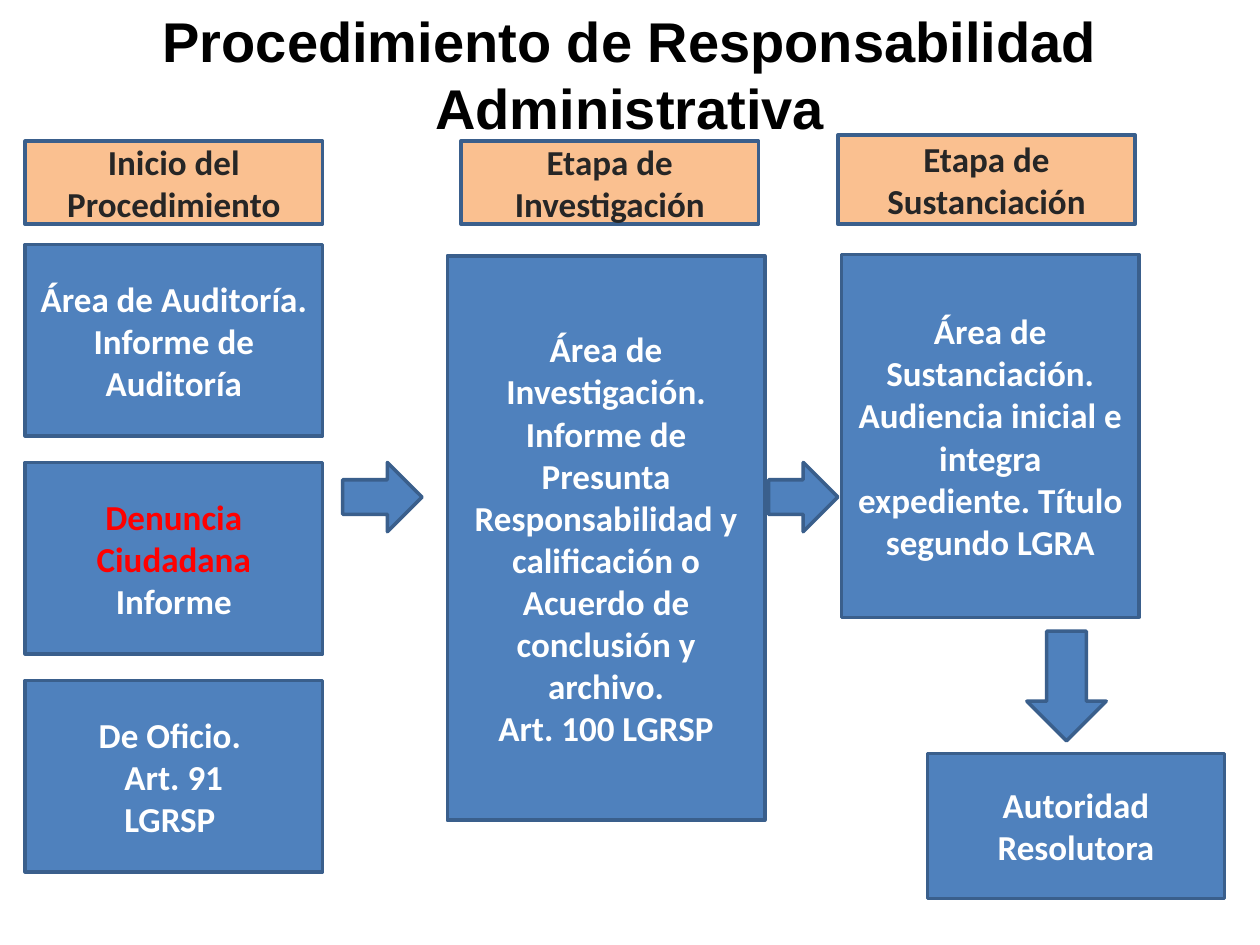
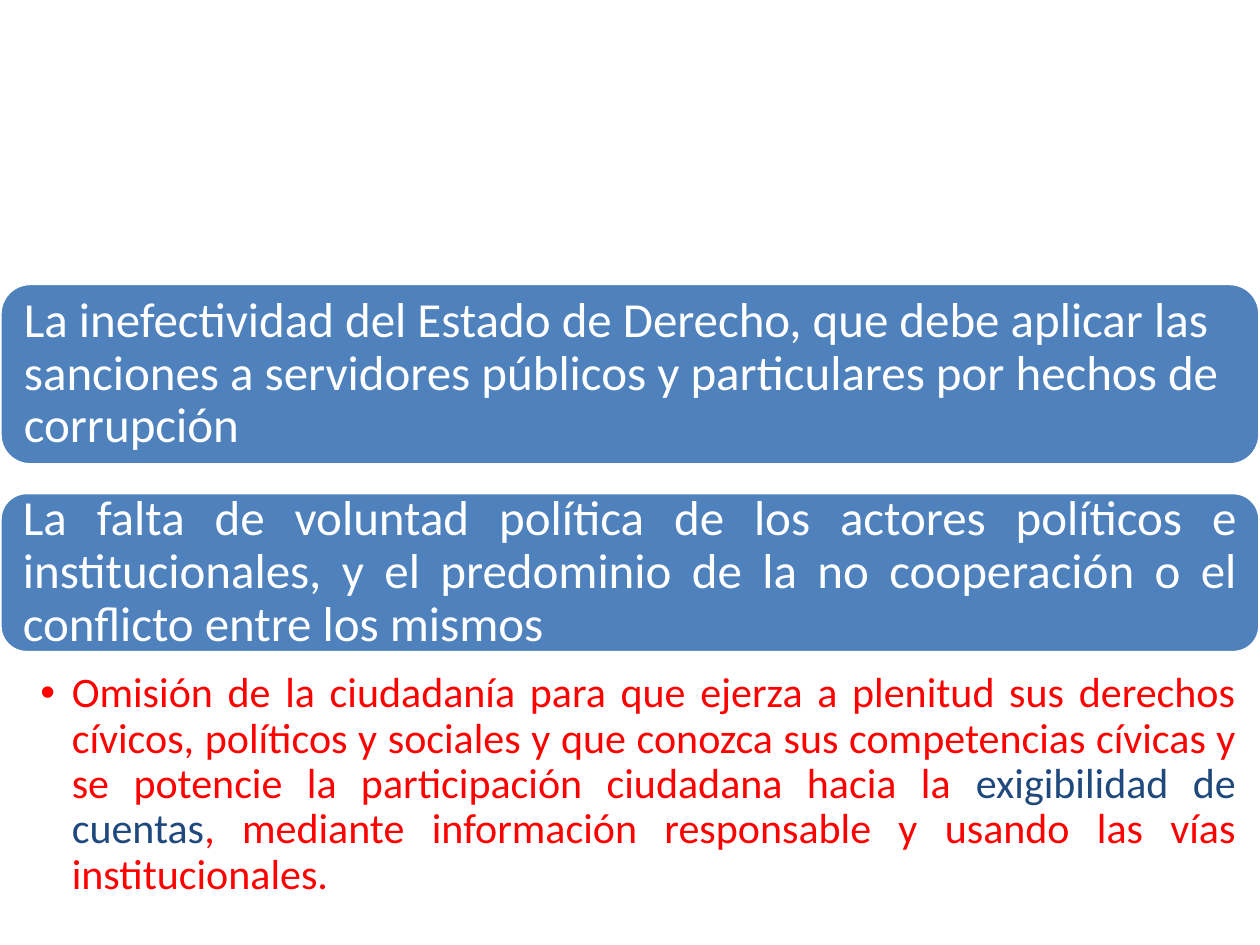
import dataclasses

import pptx
import pptx.dml.color
import pptx.enum.shapes
import pptx.enum.text
import pptx.util
from lxml import etree

EMU_PER_PX = 9144
BLUE, BORDER, PEACH = "4F81BD", "3A5F8C", "FAC090"
WHITE, BLACK, CHARCOAL, RED, NAVY = "FFFFFF", "000000", "262626", "FF0000", "1F497D"
Shape = pptx.enum.shapes.MSO_SHAPE
Align = pptx.enum.text.PP_ALIGN
Anchor = pptx.enum.text.MSO_ANCHOR


@dataclasses.dataclass(frozen=True)
class TextStyle:
    size: int
    bold: bool = False
    font: str = "Calibri"
    align: Align = Align.CENTER
    spacing: float = 1.0
    anchor: Anchor = Anchor.MIDDLE
    insets: tuple[int, int, int, int] = (10, 5, 10, 5)
    bullet_indent: int = 0


@dataclasses.dataclass(frozen=True)
class Block:
    left: int
    top: int
    width: int
    height: int
    paragraphs: tuple[tuple[tuple[str, str], ...], ...] = ()
    kind: Shape = Shape.RECTANGLE
    fill: str = BLUE
    line: str = BORDER


TITLE = TextStyle(32, bold=True, font="Arial", anchor=Anchor.TOP)
LABEL = TextStyle(20, bold=True)
BAND = TextStyle(28, align=Align.LEFT, spacing=0.9, insets=(12, 12, 12, 12))
BAND_JUSTIFIED = dataclasses.replace(BAND, align=Align.JUSTIFY)
BULLET = TextStyle(24, align=Align.JUSTIFY, spacing=0.9, anchor=Anchor.TOP,
                   insets=(32, 3, 19, 3), bullet_indent=25)

BOX_WIDTH, START_LEFT, START_TOP, START_HEIGHT, START_STEP = 236, 20, 194, 152, 173


def px(length: int) -> int:
    return pptx.util.Emu(length * EMU_PER_PX)


def color(code: str) -> pptx.dml.color.RGBColor:
    return pptx.dml.color.RGBColor.from_string(code)


def lines(*texts: str, ink: str = WHITE) -> tuple:
    return tuple(((text, ink),) for text in texts)


def add_bullet(paragraph, indent: int) -> None:
    properties = paragraph._p.get_or_add_pPr()
    properties.set("marL", str(px(indent)))
    properties.set("indent", str(-px(indent)))
    namespace = etree.QName(properties).namespace
    font = etree.SubElement(properties, f"{{{namespace}}}buFont")
    font.set("typeface", "Arial")
    etree.SubElement(properties, f"{{{namespace}}}buChar").set("char", "•")


def write(box, paragraphs: tuple, style: TextStyle) -> None:
    frame = box.text_frame
    frame.word_wrap = True
    frame.vertical_anchor = style.anchor
    (frame.margin_left, frame.margin_top,
     frame.margin_right, frame.margin_bottom) = map(px, style.insets)
    for index, spans in enumerate(paragraphs):
        paragraph = frame.add_paragraph() if index else frame.paragraphs[0]
        if style.bullet_indent:
            add_bullet(paragraph, style.bullet_indent)
        paragraph.alignment = style.align
        paragraph.line_spacing = style.spacing
        for text, ink in spans:
            span = paragraph.add_run()
            span.text = text
            span.font.name = style.font
            span.font.size = pptx.util.Pt(style.size)
            span.font.bold = style.bold
            span.font.color.rgb = color(ink)


def draw_block(page, block: Block, style: TextStyle) -> None:
    shape = page.shapes.add_shape(
        block.kind, *map(px, (block.left, block.top, block.width, block.height)))
    shape.shadow.inherit = False
    shape.fill.solid()
    shape.fill.fore_color.rgb = color(block.fill)
    shape.line.color.rgb = color(block.line)
    shape.line.width = pptx.util.Pt(2)
    write(shape, block.paragraphs, style)


def draw_text(page, block: Block, style: TextStyle) -> None:
    box = page.shapes.add_textbox(
        *map(px, (block.left, block.top, block.width, block.height)))
    write(box, block.paragraphs, style)


def header(left: int, top: int, height: int, text: str) -> Block:
    return Block(left, top, BOX_WIDTH, height, lines(text, ink=CHARCOAL), fill=PEACH)


def band(top: int, height: int, text: str) -> Block:
    return Block(0, top, 1000, height, lines(text), Shape.ROUNDED_RECTANGLE, line=WHITE)


def build_procedure(page) -> None:
    title = lines("Procedimiento de Responsabilidad Administrativa", ink=BLACK)
    draw_text(page, Block(0, 0, 1000, 77, title), TITLE)
    starts = (
        lines("Área de Auditoría. Informe de Auditoría"),
        ((("Denuncia Ciudadana ", RED), ("Informe", WHITE)),),
        lines("De Oficio. ", "Art. 91", "LGRSP "),
    )
    blocks = [Block(START_LEFT, START_TOP + row * START_STEP, BOX_WIDTH, START_HEIGHT, text)
              for row, text in enumerate(starts)]
    blocks += [
        Block(355, 203, 252, 448, lines(
            "Área de Investigación. Informe de Presunta Responsabilidad y calificación "
            "o Acuerdo de conclusión y archivo.", "Art. 100 LGRSP")),
        Block(736, 598, BOX_WIDTH, 115, lines("Autoridad Resolutora")),
        Block(668, 202, BOX_WIDTH, 288, lines(
            "Área de Sustanciación. Audiencia inicial e integra expediente. "
            "Título segundo LGRA")),
        header(START_LEFT, 112, 66, "Inicio del Procedimiento"),
        header(366, 112, 66, "Etapa de Investigación"),
        header(665, 107, 71, "Etapa de Sustanciación"),
        Block(272, 367, 63, 55, kind=Shape.RIGHT_ARROW),
        Block(610, 367, 55, 55, kind=Shape.RIGHT_ARROW),
        Block(815, 501, 63, 87, kind=Shape.DOWN_ARROW),
    ]
    for block in blocks:
        draw_block(page, block, LABEL)


def build_causes(page) -> None:
    draw_block(page, band(
        225, 144, "La inefectividad del Estado de Derecho, que debe aplicar las sanciones "
        "a servidores públicos y particulares por hechos de corrupción"), BAND)
    draw_block(page, band(
        391, 127, "La falta de voluntad política de los actores políticos e institucionales, "
        "y el predominio de la no cooperación o el conflicto entre los mismos"),
        BAND_JUSTIFIED)
    omission = (
        ("Omisión de la ciudadanía para que ejerza a plenitud sus derechos cívicos, "
         "políticos y sociales y que conozca sus competencias cívicas y se potencie "
         "la participación ciudadana hacia la ", RED),
        ("exigibilidad de cuentas", NAVY),
        (", mediante información responsable y usando las vías institucionales.", RED),
    )
    draw_text(page, Block(0, 530, 1000, 174, (omission,)), BULLET)


def main() -> None:
    """Build the two slides on administrative responsibility."""
    deck = pptx.Presentation()
    deck.slide_width, deck.slide_height = px(1000), px(750)
    for build in (build_procedure, build_causes):
        build(deck.slides.add_slide(deck.slide_layouts[6]))
    deck.save("out.pptx")


if __name__ == "__main__":
    main()
